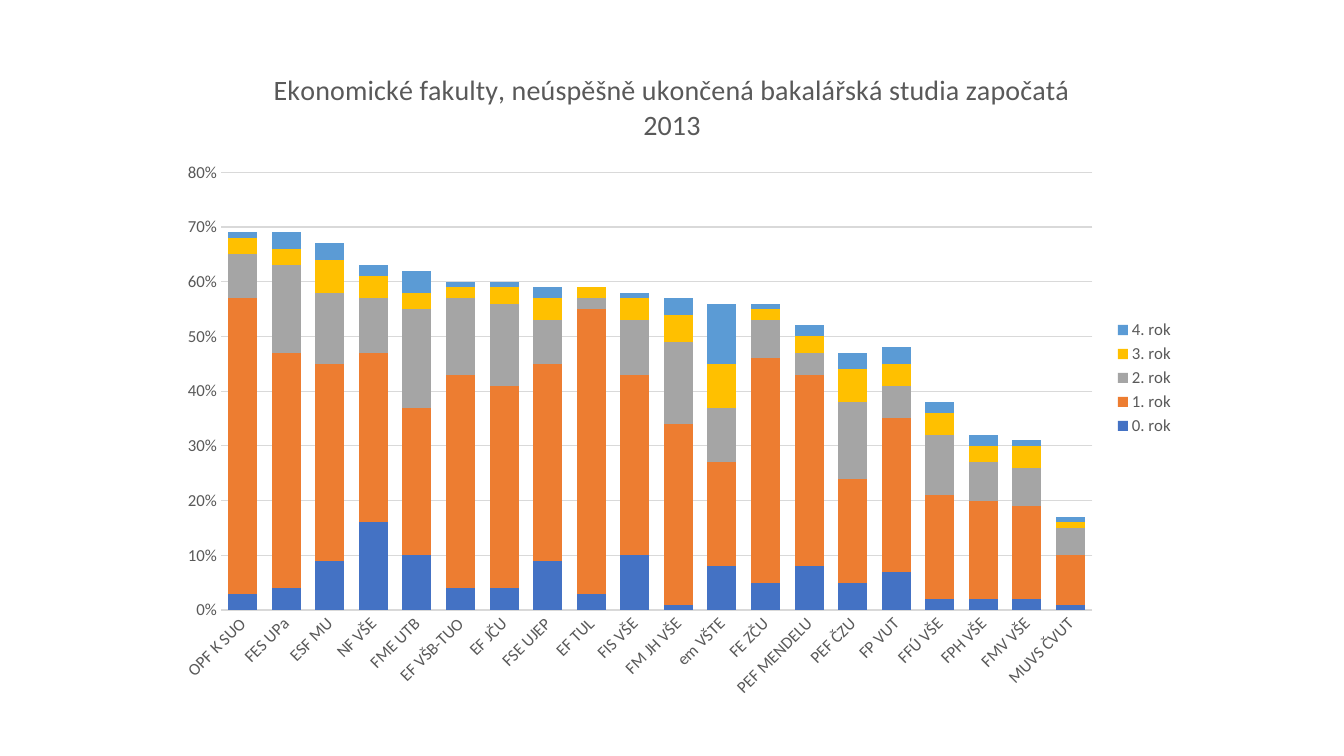
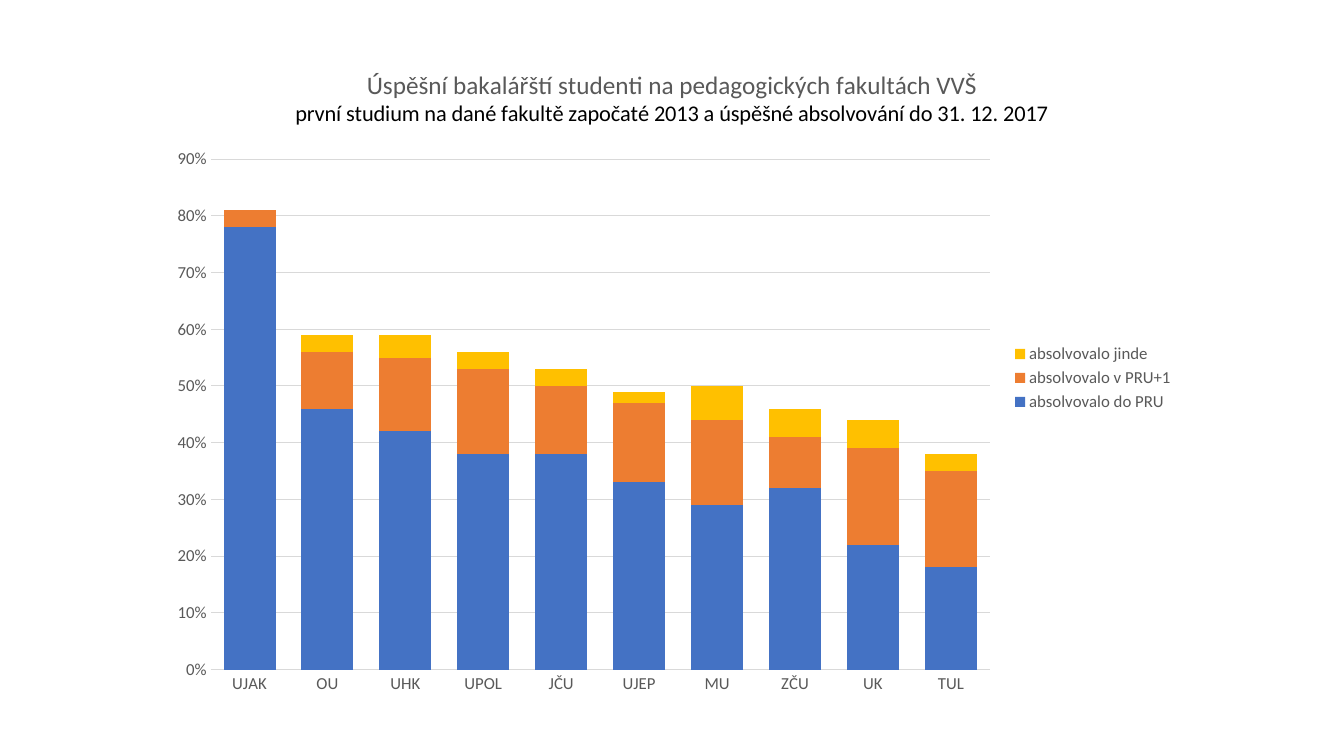
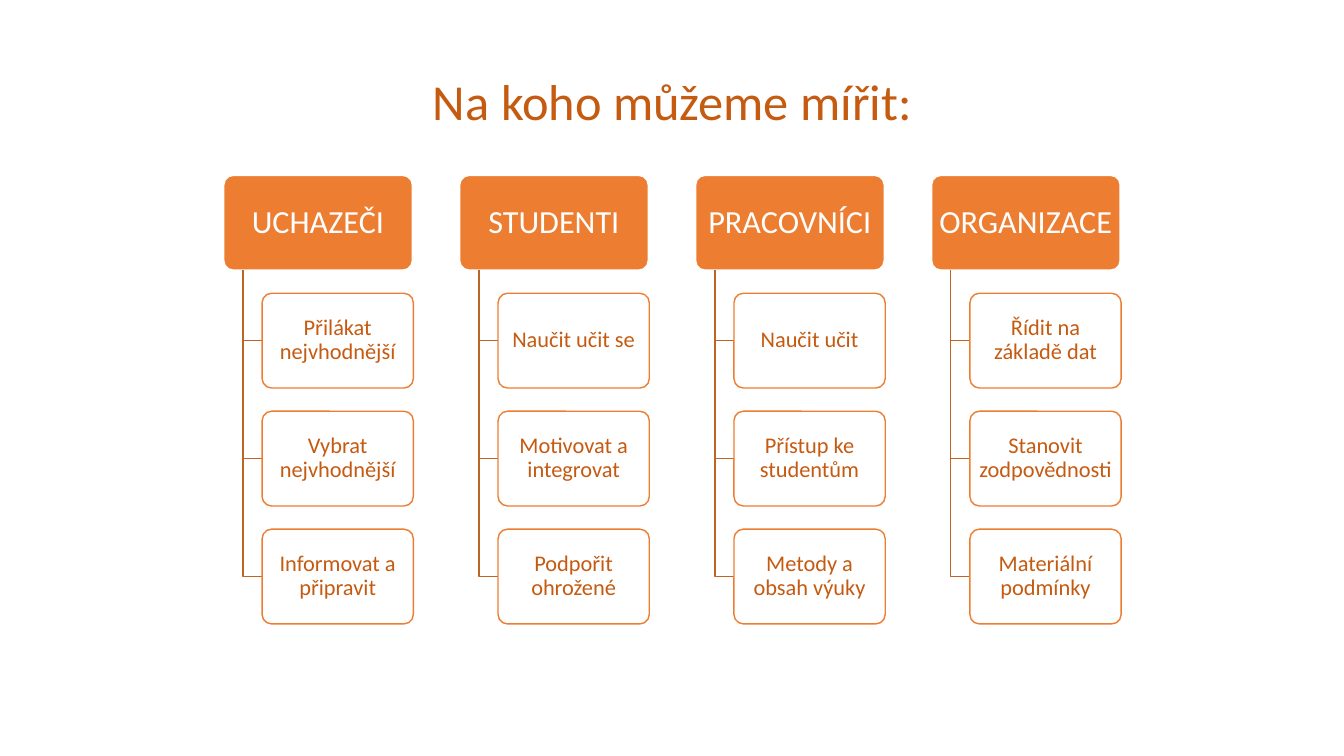
"""Build three slides: two stacked column charts on study outcomes and a map of target groups."""
from lxml.etree import SubElement
from pptx import Presentation
from pptx.chart.data import CategoryChartData
from pptx.dml.color import RGBColor
from pptx.enum.chart import XL_CHART_TYPE, XL_LEGEND_POSITION, XL_TICK_MARK
from pptx.enum.shapes import MSO_SHAPE
from pptx.enum.text import MSO_ANCHOR, MSO_AUTO_SIZE, PP_ALIGN
from pptx.oxml import parse_xml
from pptx.oxml.ns import nsdecls, qn
from pptx.util import Pt

PX = 9144
FONT = "Calibri"
COLORS = {
    "blue": "4472C4", "orange": "ED7D31", "gray": "A5A5A5", "gold": "FFC000",
    "sky": "5B9BD5", "text": "595959", "grid": "D9D9D9", "black": "000000",
    "white": "FFFFFF", "rust": "C55A11", "branch": "BE6427",
}
CHART_BOX = (158, 46, 1017, 658)

CHARTS = [
    {
        "title": [("Ekonomické fakulty, neúspěšně ukončená bakalářská studia započatá 2013", 20, "text")],
        "categories": [
            "OPF K SUO", "FES UPa", "ESF MU", "NF VŠE", "FME UTB", "EF VŠB-TUO", "EF JČU",
            "FSE UJEP", "EF TUL", "FIS VŠE", "FM JH VŠE", "em VŠTE", "FE ZČU", "PEF MENDELU",
            "PEF ČZU", "FP VUT", "FFÚ VŠE", "FPH VŠE", "FMV VŠE", "MUVS ČVUT",
        ],
        "percentages": [
            ("0. rok", "blue", [3, 4, 9, 16, 10, 4, 4, 9, 3, 10, 1, 8, 5, 8, 5, 7, 2, 2, 2, 1]),
            ("1. rok", "orange", [54, 43, 36, 31, 27, 39, 37, 36, 52, 33, 33, 19, 41, 35, 19, 28, 19, 18, 17, 9]),
            ("2. rok", "gray", [8, 16, 13, 10, 18, 14, 15, 8, 2, 10, 15, 10, 7, 4, 14, 6, 11, 7, 7, 5]),
            ("3. rok", "gold", [3, 3, 6, 4, 3, 2, 3, 4, 2, 4, 5, 8, 2, 3, 6, 4, 4, 3, 4, 1]),
            ("4. rok", "sky", [1, 3, 3, 2, 4, 1, 1, 2, 0, 1, 3, 11, 1, 2, 3, 3, 2, 2, 1, 1]),
        ],
        "maximum": 0.8,
        "label_angle": -45,
        "plot_area": {"x": 0.06, "y": 0.19, "w": 0.85, "h": 0.66},
    },
    {
        "title": [
            ("Úspěšní bakalářští studenti na pedagogických fakultách VVŠ", 18, "text"),
            ("první studium na dané fakultě započaté 2013 a úspěšné absolvování do 31. 12. 2017", 16, "black"),
        ],
        "categories": ["UJAK", "OU", "UHK", "UPOL", "JČU", "UJEP", "MU", "ZČU", "UK", "TUL"],
        "percentages": [
            ("absolvovalo do PRU", "blue", [78, 46, 42, 38, 38, 33, 29, 32, 22, 18]),
            ("absolvovalo v PRU+1", "orange", [3, 10, 13, 15, 12, 14, 15, 9, 17, 17]),
            ("absolvovalo jinde", "gold", [0, 3, 4, 3, 3, 2, 6, 5, 5, 3]),
        ],
        "maximum": 0.9,
        "label_angle": 0,
        "plot_area": {"x": 0.05, "y": 0.17, "w": 0.76, "h": 0.77},
    },
]

GROUPS = {
    "UCHAZEČI": ["Přilákat nejvhodnější", "Vybrat nejvhodnější", "Informovat a připravit"],
    "STUDENTI": ["Naučit učit se", "Motivovat a integrovat", "Podpořit ohrožené"],
    "PRACOVNÍCI": ["Naučit učit", "Přístup ke studentům", "Metody a obsah výuky"],
    "ORGANIZACE": ["Řídit na základě dat", "Stanovit zodpovědnosti", "Materiální podmínky"],
}
GROUP_LEFT, GROUP_STEP = 222, 234
HEADING_TOP, HEADING_WIDTH, BOX_HEIGHT = 174, 187, 94
CARD_TOP, CARD_STEP, CARD_WIDTH, CARD_INDENT = 291, 117, 150, 38
HEADING_STYLE = {"fill": "orange", "line": "white", "color": "white", "size": 23, "margins": (5, 3), "wrap": False}
CARD_STYLE = {"fill": "white", "line": "orange", "color": "rust", "size": 16, "margins": (3, 2), "wrap": True}


def style_font(font, size, color):
    """Apply the shared typeface with the given size and colour."""
    for name, value in {"name": FONT, "size": Pt(size), "bold": False}.items():
        setattr(font, name, value)
    font.color.rgb = RGBColor.from_string(COLORS[color])


def add_box(slide, box, text, style):
    """Add a rounded box with centred text."""
    shape = slide.shapes.add_shape(MSO_SHAPE.ROUNDED_RECTANGLE, *(value * PX for value in box))
    shape.adjustments[0] = 0.1
    shape.shadow.inherit = False
    shape.fill.solid()
    shape.fill.fore_color.rgb = RGBColor.from_string(COLORS[style["fill"]])
    shape.line.color.rgb = RGBColor.from_string(COLORS[style["line"]])
    shape.line.width = Pt(1)
    side, edge = (margin * PX for margin in style["margins"])
    frame_format = {
        "text": text, "word_wrap": style["wrap"], "vertical_anchor": MSO_ANCHOR.MIDDLE,
        "margin_left": side, "margin_right": side, "margin_top": edge, "margin_bottom": edge,
    }
    for name, value in frame_format.items():
        setattr(shape.text_frame, name, value)
    paragraph = shape.text_frame.paragraphs[0]
    paragraph.alignment = PP_ALIGN.CENTER
    paragraph.line_spacing = 0.9
    style_font(paragraph.runs[0].font, style["size"], style["color"])
    return shape


presentation = Presentation()
presentation.slide_width = 1333 * PX
presentation.slide_height = 750 * PX
blank_layout = presentation.slide_layouts[6]

for content in CHARTS:
    slide = presentation.slides.add_slide(blank_layout)
    chart_data = CategoryChartData(number_format="0%")
    chart_data.categories = content["categories"]
    for name, color, percentages in content["percentages"]:
        chart_data.add_series(name, [percentage / 100 for percentage in percentages])
    chart = slide.shapes.add_chart(
        XL_CHART_TYPE.COLUMN_STACKED, *(value * PX for value in CHART_BOX), chart_data
    ).chart
    style_font(chart.font, 12, "text")

    chart.has_title = True
    title_frame = chart.chart_title.text_frame
    title_frame.text = "\n".join(text for text, size, color in content["title"])
    for paragraph, (text, size, color) in zip(title_frame.paragraphs, content["title"]):
        style_font(paragraph.runs[0].font, size, color)
    chart.chart_title.include_in_layout = False

    chart.has_legend = True
    chart.legend.position = XL_LEGEND_POSITION.RIGHT
    chart.legend.include_in_layout = False
    style_font(chart.legend.font, 12, "text")

    plot = chart.plots[0]
    for name, value in {"gap_width": 50, "overlap": 100, "vary_by_categories": False}.items():
        setattr(plot, name, value)
    for series, (name, color, percentages) in zip(plot.series, content["percentages"]):
        series.format.fill.solid()
        series.format.fill.fore_color.rgb = RGBColor.from_string(COLORS[color])

    category_axis, value_axis = chart.category_axis, chart.value_axis
    for axis in (category_axis, value_axis):
        axis.major_tick_mark = axis.minor_tick_mark = XL_TICK_MARK.NONE
        style_font(axis.tick_labels.font, 12, "text")
    axis_format = {"minimum_scale": 0, "maximum_scale": content["maximum"], "major_unit": 0.1, "has_major_gridlines": True}
    for name, value in axis_format.items():
        setattr(value_axis, name, value)
    value_axis.tick_labels.number_format = "0%"
    value_axis.tick_labels.number_format_is_linked = False
    value_axis.format.line.fill.background()
    for line in (category_axis.format.line, value_axis.major_gridlines.format.line):
        line.color.rgb = RGBColor.from_string(COLORS["grid"])
        line.width = Pt(0.75)
    label_body = category_axis._element.xpath("c:txPr/a:bodyPr")[0]
    label_body.set("rot", str(content["label_angle"] * 60000))

    plot_area = chart._chartSpace.xpath("c:chart/c:plotArea")[0]
    for layout in plot_area.xpath("c:layout"):
        plot_area.remove(layout)
    modes = '<c:layoutTarget val="inner"/><c:xMode val="edge"/><c:yMode val="edge"/>'
    sizes = "".join(f'<c:{key} val="{value}"/>' for key, value in content["plot_area"].items())
    plot_area.insert(0, parse_xml(
        f'<c:layout {nsdecls("c")}><c:manualLayout>{modes}{sizes}</c:manualLayout></c:layout>'
    ))

slide = presentation.slides.add_slide(blank_layout)
for column, (heading, cards) in enumerate(GROUPS.items()):
    left = GROUP_LEFT + column * GROUP_STEP
    add_box(slide, (left, HEADING_TOP, HEADING_WIDTH, BOX_HEIGHT), heading, HEADING_STYLE)
    trunk, trunk_top = left + CARD_INDENT // 2, HEADING_TOP + BOX_HEIGHT
    card_left = left + CARD_INDENT
    for row, text in enumerate(cards):
        top = CARD_TOP + row * CARD_STEP
        middle = top + BOX_HEIGHT // 2
        builder = slide.shapes.build_freeform(trunk, trunk_top, scale=PX)
        builder.add_line_segments([(trunk, middle), (card_left, middle)], close=False)
        branch = builder.convert_to_shape()
        branch.shadow.inherit = False
        branch.fill.background()
        branch.line.color.rgb = RGBColor.from_string(COLORS["branch"])
        branch.line.width = Pt(1)
        card = add_box(slide, (card_left, top, CARD_WIDTH, BOX_HEIGHT), text, CARD_STYLE)
        fill_color = card._element.spPr.find(qn("a:solidFill"))[0]
        SubElement(fill_color, qn("a:alpha")).set("val", "90000")

title_box = slide.shapes.add_textbox(*(value * PX for value in (417, 65, 500, 71)))
title_frame = title_box.text_frame
title_format = {"text": "Na koho můžeme mířit:", "word_wrap": False, "auto_size": MSO_AUTO_SIZE.SHAPE_TO_FIT_TEXT}
for name, value in title_format.items():
    setattr(title_frame, name, value)
title_frame.paragraphs[0].alignment = PP_ALIGN.CENTER
style_font(title_frame.paragraphs[0].runs[0].font, 36, "rust")

presentation.save("out.pptx")
